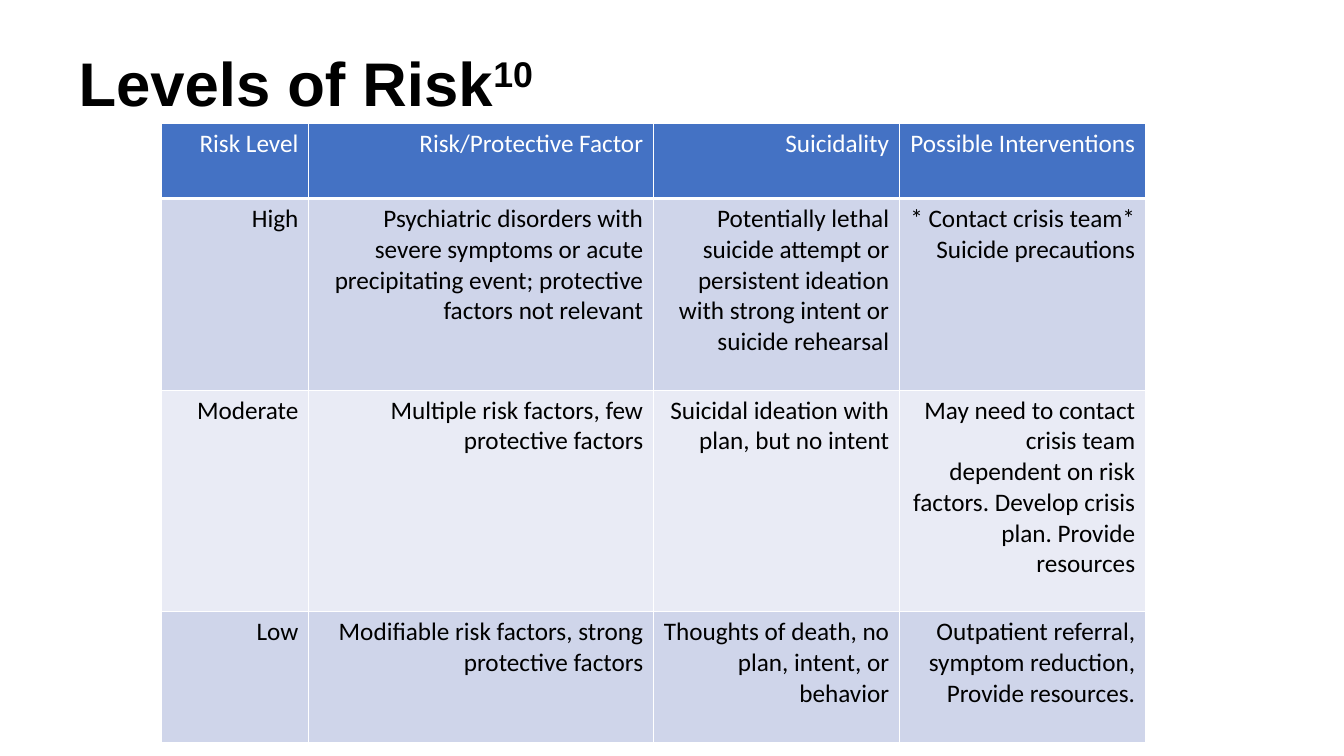
from lxml.etree import SubElement
from pptx import Presentation
from pptx.dml.color import RGBColor
from pptx.enum.text import MSO_ANCHOR as Anchor, PP_ALIGN as Align
from pptx.oxml.ns import qn
from pptx.util import Inches, Pt

COLOURS = {
    "ink": "000000",
    "paper": "FFFFFF",
    "header": "4472C4",
    "odd_row": "CFD5EA",
    "even_row": "E9EBF5",
}
COLUMN_WIDTHS = [1.46, 3.42, 2.44, 2.44]
ROW_HEIGHTS = [0.75, 1.9, 2.2, 1.3]
RISK_ROWS = [
    ["Risk Level", "Risk/Protective Factor", "Suicidality", "Possible Interventions"],
    [
        "High",
        "Psychiatric disorders with severe symptoms or acute precipitating event; "
        "protective factors not relevant",
        "Potentially lethal suicide attempt or persistent ideation with strong intent "
        "or suicide rehearsal",
        "* Contact crisis team* Suicide precautions",
    ],
    [
        "Moderate",
        "Multiple risk factors, few protective factors",
        "Suicidal ideation with plan, but no intent",
        "May need to contact crisis team dependent on risk factors. "
        "Develop crisis plan. Provide resources",
    ],
    [
        "Low",
        "Modifiable risk factors, strong protective factors",
        "Thoughts of death, no plan, intent, or behavior",
        "Outpatient referral, symptom reduction, Provide resources.",
    ],
]


def colour(name):
    return RGBColor.from_string(COLOURS[name])


def style_font(font, name, size, ink, bold=False):
    font.name = name
    font.size = Pt(size)
    font.bold = bold
    font.color.rgb = colour(ink)


def add_title(page, left, top, width, height):
    box = page.shapes.add_textbox(Inches(left), Inches(top), Inches(width), Inches(height))
    frame = box.text_frame
    frame.word_wrap = True
    frame.vertical_anchor = Anchor.MIDDLE
    frame.margin_left = frame.margin_right = Inches(0.05)
    frame.margin_top = frame.margin_bottom = Inches(0.05)
    para = frame.paragraphs[0]
    para.line_spacing = 0.9
    para.add_run().text = "Levels of Risk"
    reference = para.add_run()
    reference.text = "10"
    reference._r.get_or_add_rPr().set("baseline", "30000")
    style_font(para.font, "Arial", 44, "ink", bold=True)


def add_borders(cell, bottom_width):
    properties = cell._tc.get_or_add_tcPr()
    for side, width in (("L", 1), ("R", 1), ("T", 1), ("B", bottom_width)):
        line = SubElement(properties, qn(f"a:ln{side}"), w=str(Pt(width)))
        fill = SubElement(line, qn("a:solidFill"))
        SubElement(fill, qn("a:srgbClr"), val=COLOURS["paper"])


def fill_cell(cell, text, row_index):
    is_header = row_index == 0
    add_borders(cell, 3 if is_header else 1)
    cell.fill.solid()
    band = "odd_row" if row_index % 2 else "even_row"
    cell.fill.fore_color.rgb = colour("header" if is_header else band)
    cell.margin_left = cell.margin_right = Inches(0.1)
    cell.margin_top = cell.margin_bottom = Inches(0.05)
    cell.text = text
    para = cell.text_frame.paragraphs[0]
    para.alignment = Align.RIGHT
    style_font(para.font, "Calibri", 18, "paper" if is_header else "ink")


def add_risk_table(page, left, top, width, height):
    frame = page.shapes.add_table(
        len(RISK_ROWS), len(COLUMN_WIDTHS),
        Inches(left), Inches(top), Inches(width), Inches(height),
    )
    table = frame.table
    for column, column_width in zip(table.columns, COLUMN_WIDTHS):
        column.width = Inches(column_width)
    for row_index, texts in enumerate(RISK_ROWS):
        table.rows[row_index].height = Inches(ROW_HEIGHTS[row_index])
        for column_index, text in enumerate(texts):
            fill_cell(table.cell(row_index, column_index), text, row_index)


def main():
    deck = Presentation()
    deck.slide_width = Inches(13.33)
    deck.slide_height = Inches(7.5)
    page = deck.slides.add_slide(deck.slide_layouts[6])
    add_title(page, 0.73, 0.13, 11.5, 1.45)
    add_risk_table(page, 1.6, 1.22, sum(COLUMN_WIDTHS), sum(ROW_HEIGHTS))
    deck.save("out.pptx")


if __name__ == "__main__":
    main()
